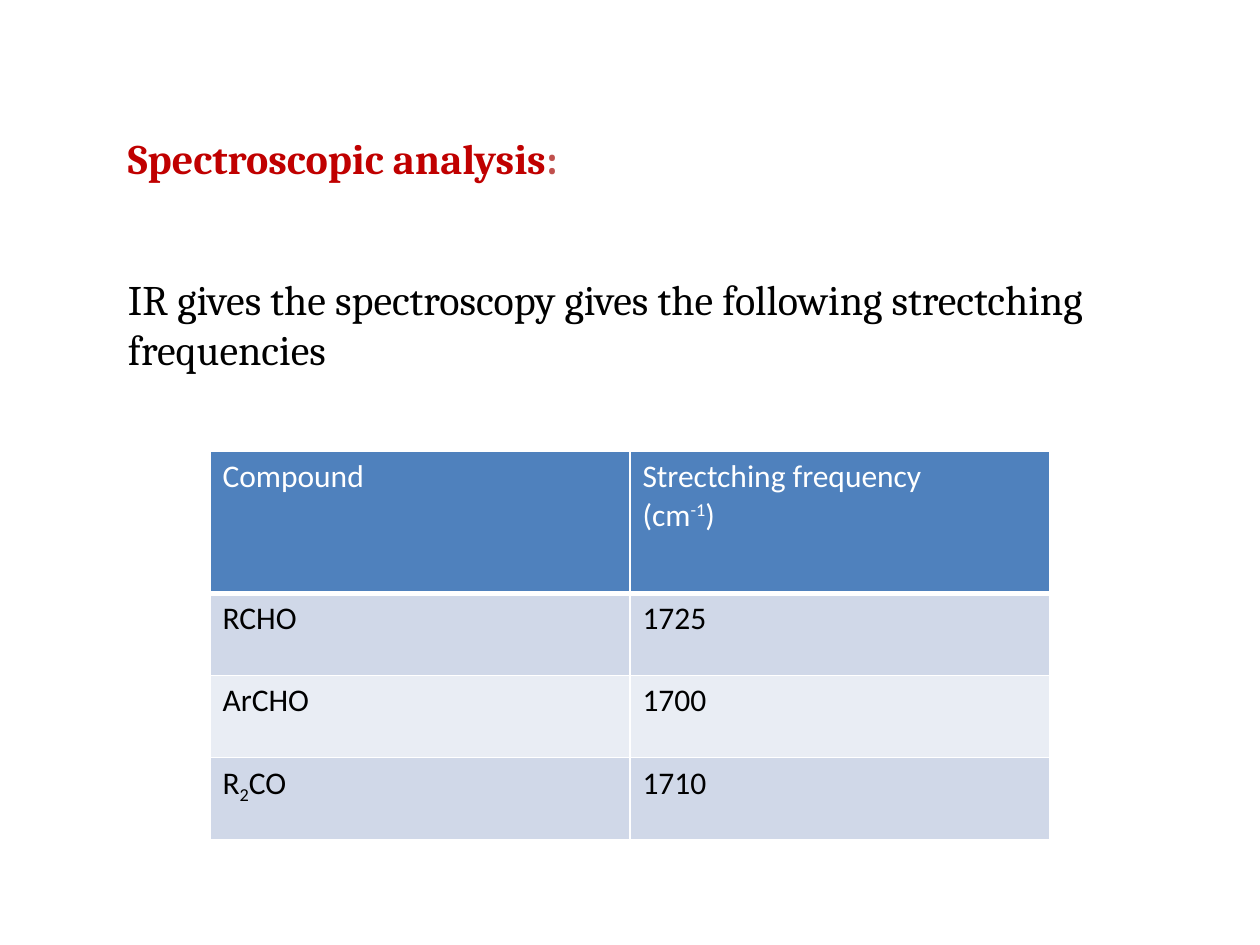
from lxml import etree
from pptx import Presentation
from pptx.dml.color import RGBColor
from pptx.oxml.ns import qn
from pptx.util import Pt

BLANK_LAYOUT = 6
WHITE, BLACK, RED, SOFT_RED = "FFFFFF", "000000", "C00000", "C0504D"
HEADER_FILL, BAND_FILLS = "4F81BD", ("D0D8E8", "E9EDF4")
SUPERSCRIPT, SUBSCRIPT = 30, -25

HEADER = [[["Compound"]], [["Strectching frequency"], ["(cm", ("-1", SUPERSCRIPT), ")"]]]
FREQUENCIES = [
    ([["RCHO"]], [["1725"]]),
    ([["ArCHO"]], [["1700"]]),
    ([["R", ("2", SUBSCRIPT), "CO"]], [["1710"]]),
]


def rgb(value):
    return RGBColor.from_string(value)


def add_text(paragraph, text, size=18, font="Calibri", color=BLACK, bold=False, baseline=0):
    run = paragraph.add_run()
    run.text = text
    run.font.size = Pt(size)
    run.font.name = font
    run.font.bold = bold
    run.font.color.rgb = rgb(color)
    if baseline:
        run.font._element.set("baseline", str(baseline * 1000))


def add_heading_and_intro(slide):
    box = slide.shapes.add_textbox(Pt(66), Pt(72), Pt(600), Pt(240))
    frame = box.text_frame
    frame.word_wrap = True
    heading = frame.paragraphs[0]
    add_text(heading, "Spectroscopic analysis", size=24, font="Cambria", color=RED, bold=True)
    add_text(heading, ":", size=24, font="Cambria", color=SOFT_RED, bold=True)
    intro = frame.add_paragraph()
    intro.space_before = Pt(52)
    add_text(intro, "IR gives the spectroscopy gives the following strectching frequencies",
             size=24, font="Cambria")


def set_borders(cell, bottom_width):
    properties = cell._tc.get_or_add_tcPr()
    widths = {"a:lnL": 1, "a:lnR": 1, "a:lnT": 1, "a:lnB": bottom_width}
    for position, (side, width) in enumerate(widths.items()):
        line = etree.Element(qn(side), w=str(Pt(width)))
        fill = etree.SubElement(line, qn("a:solidFill"))
        etree.SubElement(fill, qn("a:srgbClr"), val=WHITE)
        properties.insert(position, line)


def fill_cell(cell, lines, fill, color=BLACK, bottom_width=1):
    cell.fill.solid()
    cell.fill.fore_color.rgb = rgb(fill)
    set_borders(cell, bottom_width)
    frame = cell.text_frame
    for index, pieces in enumerate(lines):
        paragraph = frame.add_paragraph() if index else frame.paragraphs[0]
        for piece in pieces:
            text, baseline = (piece, 0) if isinstance(piece, str) else piece
            add_text(paragraph, text, color=color, baseline=baseline)


def add_frequency_table(slide):
    table = slide.shapes.add_table(
        len(FREQUENCIES) + 1, len(HEADER), Pt(120), Pt(258), Pt(480), Pt(222)).table
    for index, row in enumerate(table.rows):
        row.height = Pt(47 if index else 81)
    for column, lines in enumerate(HEADER):
        fill_cell(table.cell(0, column), lines, HEADER_FILL, color=WHITE, bottom_width=3)
    for index, entry in enumerate(FREQUENCIES):
        for column, lines in enumerate(entry):
            fill_cell(table.cell(index + 1, column), lines, BAND_FILLS[index % 2])


def main():
    deck = Presentation()
    deck.slide_width, deck.slide_height = Pt(720), Pt(540)
    slide = deck.slides.add_slide(deck.slide_layouts[BLANK_LAYOUT])
    add_heading_and_intro(slide)
    add_frequency_table(slide)
    deck.save("out.pptx")


if __name__ == "__main__":
    main()
